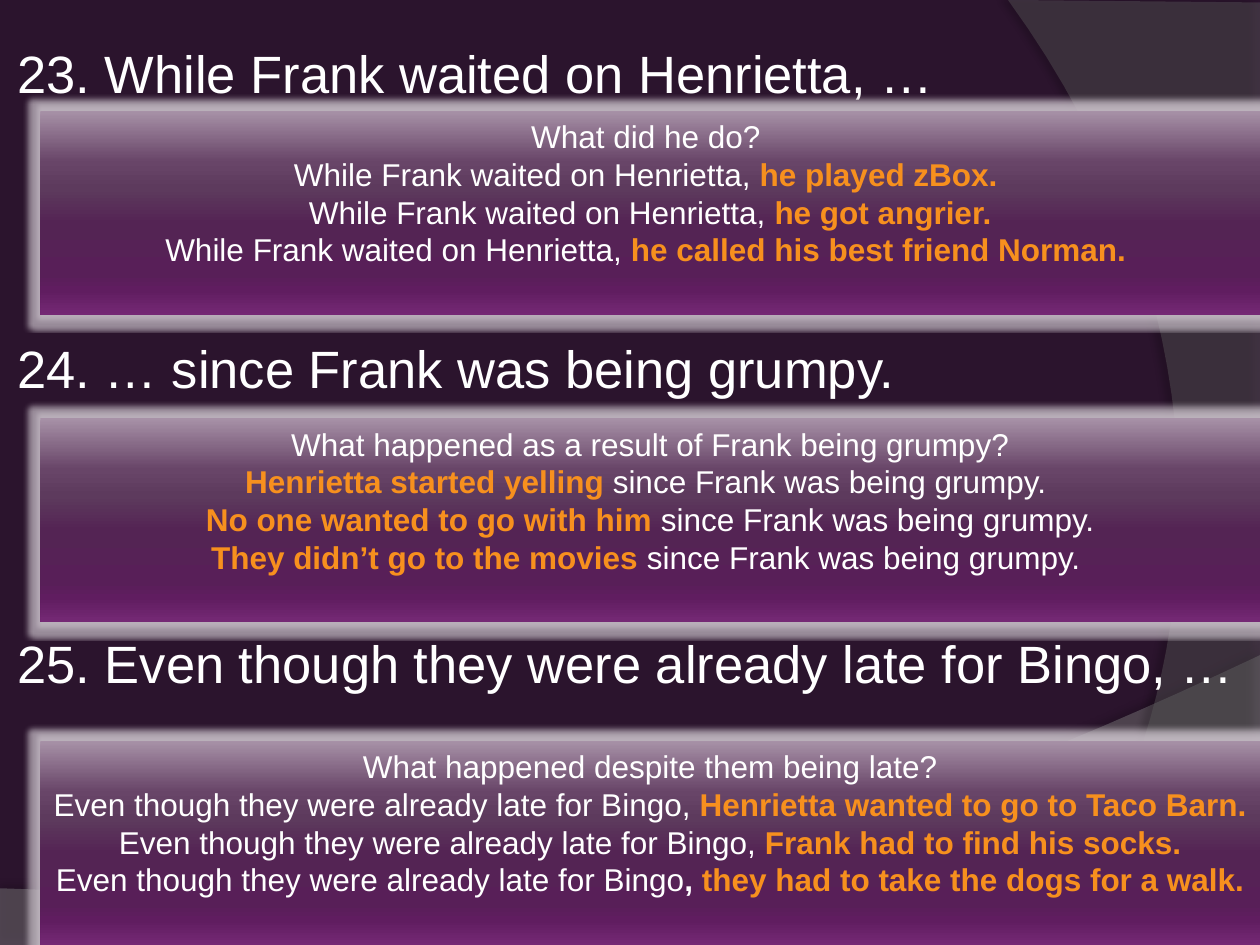
from lxml import etree
from pptx import Presentation
from pptx.dml.color import RGBColor
from pptx.enum.shapes import MSO_SHAPE
from pptx.enum.text import MSO_ANCHOR, PP_ALIGN
from pptx.oxml.ns import qn
from pptx.util import Inches, Pt

RECTANGLE = MSO_SHAPE.RECTANGLE
TOP = MSO_ANCHOR.TOP
CENTER = PP_ALIGN.CENTER

FONT = "Arial"
WHITE, ORANGE, NIGHT, HALO = "FFFFFF", "F7901E", "2B142D", "C8BFC8"
PANEL_STOPS = [(0, "A791A7"), (25, "684568"), (38, "5D3A5D"), (55, "542454"),
               (80, "581F58"), (88, "601D60"), (100, "752975")]

WAIT = "While Frank waited on Henrietta, "
GRUMPY = "since Frank was being grumpy."
LATE = "Even though they were already late for Bingo"

# Each line is a list of (text, colour, bold) spans.
EXERCISES = [
    ("23. While Frank waited on Henrietta, …", 0.88, [
        [("What did he do? ", WHITE, False)],
        [(WAIT, WHITE, False), ("he played zBox. ", ORANGE, True)],
        [(WAIT, WHITE, False), ("he got angrier.", ORANGE, True)],
        [(WAIT, WHITE, False),
         ("he called his best friend Norman. ", ORANGE, True)],
    ]),
    ("24. … since Frank was being grumpy.", 3.32, [
        [("What happened as a result of Frank being grumpy?", WHITE, False)],
        [("Henrietta started yelling ", ORANGE, True),
         (GRUMPY + " ", WHITE, False)],
        [("No one wanted to go with him ", ORANGE, True),
         (GRUMPY, WHITE, False)],
        [("They didn’t go to the movies ", ORANGE, True),
         (GRUMPY + " ", WHITE, False)],
    ]),
    ("25. Even though they were already late for Bingo, …", 5.88, [
        [("What happened despite them being late?", WHITE, False)],
        [(LATE + ", ", WHITE, False),
         ("Henrietta wanted to go to Taco Barn. ", ORANGE, True)],
        [(LATE + ", ", WHITE, False),
         ("Frank had to find his socks.", ORANGE, True)],
        [(LATE, WHITE, False), (", ", WHITE, True),
         ("they had to take the dogs for a walk.", ORANGE, True)],
    ]),
]


def color(hex_code):
    return RGBColor.from_string(hex_code)


def add_color(parent, hex_code, opacity=100):
    node = etree.SubElement(parent, qn("a:srgbClr"), val=hex_code)
    if opacity < 100:
        etree.SubElement(node, qn("a:alpha"), val=str(opacity * 1000))


def add_effect(shape, kind, hex_code, opacity, **settings):
    shape.shadow.inherit = False
    effects = shape.element.spPr.find(qn("a:effectLst"))
    values = {name: str(value) for name, value in settings.items()}
    effect = etree.SubElement(effects, qn(kind), **values)
    add_color(effect, hex_code, opacity)


def bezier(start, first, second, end, steps=40):
    """Return the points of a cubic curve, both ends included."""
    points = []
    for step in range(steps + 1):
        t = step / steps
        u = 1 - t
        weights = (u ** 3, 3 * u * u * t, 3 * u * t * t, t ** 3)
        points.append(tuple(
            sum(weight * value for weight, value in zip(weights, axis))
            for axis in zip(start, first, second, end)))
    return points


def add_swoosh(page, points, hex_code, opacity, shade, distance, angle):
    corners = [(Inches(x), Inches(y)) for x, y in points]
    builder = page.shapes.build_freeform(*corners[0])
    builder.add_line_segments(corners[1:], close=True)
    swoosh = builder.convert_to_shape()
    swoosh.fill.solid()
    swoosh.fill.fore_color.rgb = color(hex_code)
    fill_color = swoosh.element.spPr.find(qn("a:solidFill"))[0]
    etree.SubElement(fill_color, qn("a:alpha"), val=str(opacity * 1000))
    swoosh.line.fill.background()
    add_effect(swoosh, "a:outerShdw", "000000", shade, blurRad=Pt(4),
               dist=Pt(distance), dir=angle * 60000, algn="ctr",
               rotWithShape=0)


def add_backdrop(page):
    page.background.fill.solid()
    page.background.fill.fore_color.rgb = color(NIGHT)
    bottom = bezier((10, 5.2), (5.59, 7.29), (3.91, 7.19), (0, 7.05))
    add_swoosh(page, [(0, 7.5), (10, 7.5)] + bottom,
               "7F7F7F", 45, 35, 3.5, 270)
    side = bezier((8.21, 7.5), (9.35, 6.19), (10.18, 3), (8, 0))
    add_swoosh(page, [(10, 0.02), (10, 7.5)] + side,
               "5E5E5E", 40, 45, 4, 180)


def add_heading(page, text, left, top, width, height):
    box = page.shapes.add_textbox(
        Inches(left), Inches(top), Inches(width), Inches(height))
    box.text_frame.word_wrap = True
    para = box.text_frame.paragraphs[0]
    para.text = text
    para.font.name = FONT
    para.font.size = Pt(30)
    para.font.color.rgb = color(WHITE)


def fill_panel(panel):
    panel.fill.gradient()
    panel.fill.gradient_angle = 270
    stops = panel.element.spPr.find(qn("a:gradFill")).find(qn("a:gsLst"))
    stops.clear()
    for position, hex_code in PANEL_STOPS:
        stop = etree.SubElement(stops, qn("a:gs"), pos=str(position * 1000))
        add_color(stop, hex_code)


def add_panel(page, lines, left, top, width, height):
    panel = page.shapes.add_shape(
        RECTANGLE, Inches(left), Inches(top), Inches(width), Inches(height))
    fill_panel(panel)
    panel.line.fill.background()
    add_effect(panel, "a:glow", HALO, 70, rad=Inches(0.07))
    frame = panel.text_frame
    frame.word_wrap = True
    frame.vertical_anchor = TOP
    for index, line in enumerate(lines):
        para = frame.add_paragraph() if index else frame.paragraphs[0]
        para.alignment = CENTER
        para.font.name = FONT
        para.font.size = Pt(18)
        for text, hex_code, bold in line:
            span = para.add_run()
            span.text = text
            span.font.bold = bold
            span.font.color.rgb = color(hex_code)


def main():
    deck = Presentation()
    deck.slide_width, deck.slide_height = Inches(10), Inches(7.5)
    page = deck.slides.add_slide(deck.slide_layouts[6])
    add_backdrop(page)
    for index, (heading, _, _) in enumerate(EXERCISES):
        add_heading(page, heading, 0.04, 0.28 + 2.34 * index, 9.96, 0.58)
    for _, panel_top, lines in EXERCISES:
        add_panel(page, lines, 0.32, panel_top, 9.68, 1.62)
    deck.save("out.pptx")


if __name__ == "__main__":
    main()
